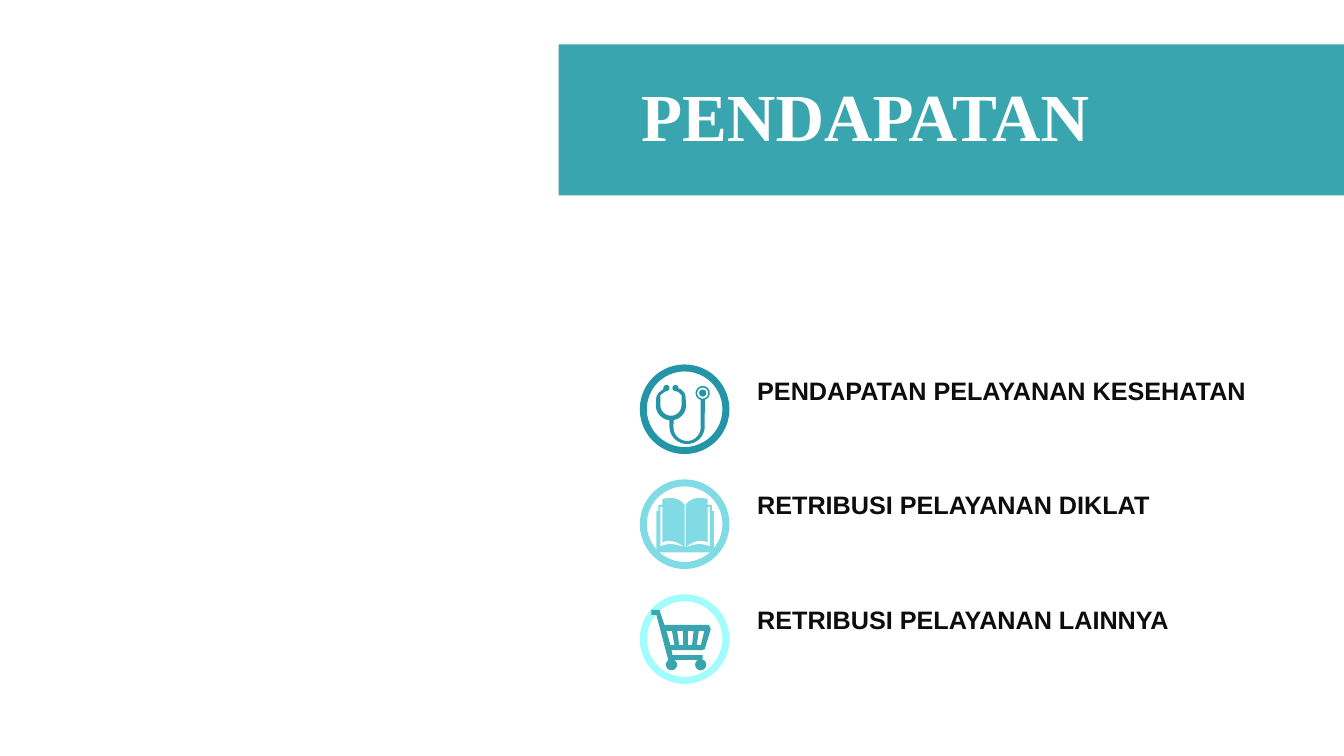
from math import cos, sin, radians

from pptx import Presentation
from pptx.dml.color import RGBColor
from pptx.enum.shapes import MSO_SHAPE
from pptx.enum.text import MSO_ANCHOR, MSO_AUTO_SIZE, PP_ALIGN
from pptx.util import Inches, Pt

HUES = {"teal": "39A5AE", "deep": "2395A6", "sky": "80DBE4",
        "ice": "A0FDFB", "white": "FFFFFF", "ink": "0D0D0D"}
CELL = Inches(1)
FINE = 10000


def arc(x, y, r, start, end, steps=24):
    turns = [radians(start + (end - start) * i / steps) for i in range(steps + 1)]
    return [(x + r * cos(t), y + r * sin(t)) for t in turns]


def bend(a, b, c, d, steps=12):
    shares = [i / steps for i in range(steps + 1)]
    return [tuple((1 - t) ** 3 * p + 3 * t * (1 - t) ** 2 * q
                  + 3 * t * t * (1 - t) * r + t ** 3 * s
                  for p, q, r, s in zip(a, b, c, d)) for t in shares]


def flip(points, mid):
    return [(2 * mid - x, y) for x, y in reversed(points)]


def scope():
    tube = (arc(23, 20, 3, 170, 450) + [(21, 24), (17, 27)]
            + arc(27.5, 37, 10.5, 180, 0) + [(38, 27), (35, 24)]
            + arc(32, 20, 3, 90, 370) + [(37, 21), (41, 25), (42, 29)]
            + arc(27.5, 37, 15, 0, 80) + arc(43.5, 59, 13.5, 180, 0)
            + arc(59, 25, 7, 107, 433) + arc(43.5, 58, 17.5, 0, 180)
            + arc(27.5, 37, 15, 96, 180) + [(13, 29), (15, 25), (20, 21)])
    return [tube] + [arc(59, 25, r, 0, 360) for r in (5.5, 3.5)]


def book():
    mid = 41.5
    half = bend((mid, 64), (51, 61), (56, 59), (66, 63)) + [
        (66, 24), (64, 24), (64, 22), (68, 22), (68, 28), (70, 28), (70, 69)]
    page = (bend((42, 22), (47, 15), (54, 14), (64, 16))
            + bend((64, 59), (57, 56), (49, 58), (42, 64)))
    return [half + flip(half, mid), page, flip(page, mid)]


def cart():
    frame = ([(8, 12), (16, 12), (21, 27), (65, 27), (67, 31), (61, 51),
              (58, 52), (28, 52), (29, 57), (59, 57), (59, 62)]
             + arc(57, 66.5, 5.5, -60, 240) + arc(28, 66.5, 5.5, -60, 235)
             + [(13, 17), (8, 17)])
    slots = []
    for i in range(4):
        top, low = 23 + 10.7 * i, 27 + 8.7 * i
        slots.append([(top, 33), (low, 47), (low + 4, 47), (top + 5.5, 33)])
    return [frame] + slots


class Deck:
    """Hold the style and the current slide on a grid of one-inch cells."""

    def __init__(self, cols, rows):
        self.show = Presentation()
        self.show.slide_width, self.show.slide_height = self.cells(cols, rows)
        self.slide = self.show.slides.add_slide(self.show.slide_layouts[5])
        self.shapes = self.slide.shapes

    def cells(self, *spans):
        return [round(CELL * span) for span in spans]

    def tint(self, name):
        return RGBColor.from_string(HUES[name])

    def paint(self, shape, fill, line=None, width=5):
        shape.shadow.inherit = False
        shape.fill.solid()
        shape.fill.fore_color.rgb = self.tint(fill)
        if line:
            shape.line.color.rgb = self.tint(line)
            shape.line.width = Pt(width)
        else:
            shape.line.fill.background()

    def style(self, frame, text, size, font, hue):
        frame.text = text
        frame.word_wrap = True
        line = frame.paragraphs[0]
        line.alignment = PP_ALIGN.LEFT
        face = line.runs[0].font
        face.name, face.size, face.bold = font, Pt(size), True
        face.color.rgb = self.tint(hue)
        return line

    def band(self, *box):
        shape = self.shapes.add_shape(MSO_SHAPE.RECTANGLE, *self.cells(*box))
        self.paint(shape, "teal")
        self.shapes._spTree.insert(2, shape._element)

    def title(self, text, *box):
        head = self.shapes.title
        head.left, head.top, head.width, head.height = self.cells(*box)
        line = self.style(head.text_frame, text, 48, "Times New Roman", "white")
        line.line_spacing = 0.9
        head.text_frame.auto_size = MSO_AUTO_SIZE.NONE
        head.text_frame.vertical_anchor = MSO_ANCHOR.MIDDLE

    def ring(self, hue, *box):
        shape = self.shapes.add_shape(MSO_SHAPE.OVAL, *self.cells(*box))
        self.paint(shape, "white", hue)

    def label(self, text, *box):
        frame = self.shapes.add_textbox(*self.cells(*box)).text_frame
        self.style(frame, text, 18, "Arial", "ink")
        frame.margin_left = frame.margin_right = Inches(0.12)
        frame.auto_size = MSO_AUTO_SIZE.SHAPE_TO_FIT_TEXT

    def icon(self, loops, hue, left, top):
        fine = [[(x * FINE / 100, y * FINE / 100) for x, y in loop] for loop in loops]
        pen = self.shapes.build_freeform(*fine[0][0], scale=CELL / FINE)
        for loop in fine:
            pen.move_to(*loop[0])
            pen.add_line_segments(loop[1:], close=True)
        self.paint(pen.convert_to_shape(*self.cells(left, top)), hue)


def main():
    deck = Deck(13.33, 7.5)
    deck.band(5.54, 0.44, 7.79, 1.5)
    deck.title("PENDAPATAN", 6.26, 0.8, 6.53, 0.78)
    items = [("PENDAPATAN PELAYANAN KESEHATAN", "deep", scope, "deep"),
             ("RETRIBUSI PELAYANAN DIKLAT", "sky", book, "sky"),
             ("RETRIBUSI PELAYANAN LAINNYA", "ice", cart, "teal")]
    left, size = 6.38, 0.82
    for row, (text, rim, draw, hue) in enumerate(items):
        top = 3.65 + 1.14 * row
        deck.ring(rim, left, top, size, size)
        deck.label(text, 7.39, top + 0.02, 5.2, 0.4)
        deck.icon(draw(), hue, left, top)
    deck.show.save("out.pptx")


if __name__ == "__main__":
    main()
